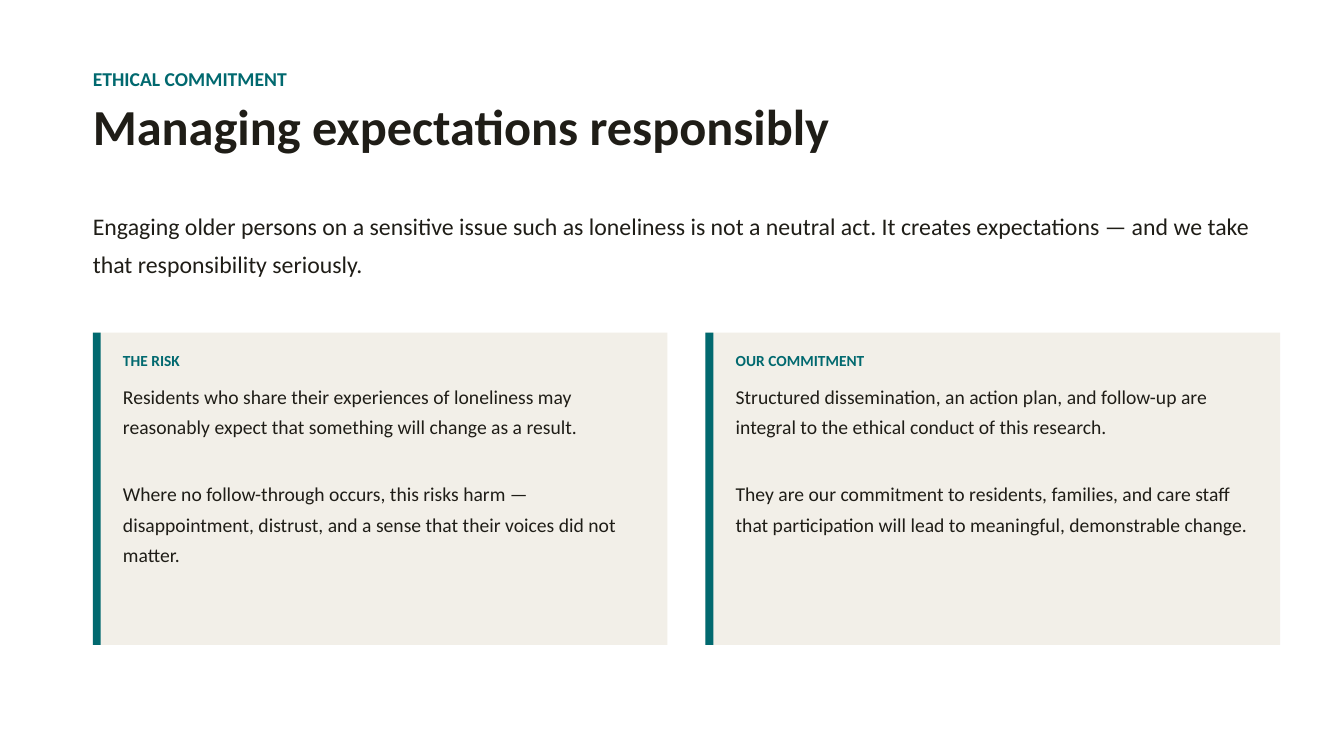
from pptx import Presentation
from pptx.dml.color import RGBColor
from pptx.enum.shapes import MSO_SHAPE as Shape
from pptx.enum.text import MSO_ANCHOR as Anchor
from pptx.util import Cm, Pt

TEAL = RGBColor(0x01, 0x69, 0x6F)
INK = RGBColor(0x1F, 0x1D, 0x17)
SAND = RGBColor(0xF2, 0xEF, 0xE8)

MARGIN = 2.34
CARD_TOP, CARD_WIDTH, CARD_HEIGHT = 8.38, 14.48, 7.87
CARD_PITCH = 15.44
BAR_WIDTH = 0.2

presentation = Presentation()
presentation.slide_width = Cm(33.87)
presentation.slide_height = Cm(19.05)
slide = presentation.slides.add_slide(presentation.slide_layouts[6])


def add_text(left, top, width, height, paragraphs, anchor=Anchor.TOP):
    """Each paragraph is (text, size, colour, bold, line spacing, space before)."""
    box = slide.shapes.add_textbox(Cm(left), Cm(top), Cm(width), Cm(height))
    frame = box.text_frame
    frame.word_wrap = True
    frame.vertical_anchor = anchor
    frame.margin_left = frame.margin_right = 0
    frame.margin_top = frame.margin_bottom = 0
    for index, (text, size, colour, bold, spacing, before) in enumerate(paragraphs):
        paragraph = frame.add_paragraph() if index else frame.paragraphs[0]
        paragraph.line_spacing = spacing
        paragraph.space_before = Pt(before)
        run = paragraph.add_run()
        run.text = text
        run.font.name = "Calibri"
        run.font.size = Pt(size)
        run.font.bold = bold
        run.font.color.rgb = colour


def add_block(left, width, colour):
    shape = slide.shapes.add_shape(
        Shape.RECTANGLE, Cm(left), Cm(CARD_TOP), Cm(width), Cm(CARD_HEIGHT))
    shape.shadow.inherit = False
    shape.fill.solid()
    shape.fill.fore_color.rgb = colour
    shape.line.fill.background()


# Heading
add_text(MARGIN, 1.02, 29.21, 3.68, [
    ("ETHICAL COMMITMENT", 14, TEAL, True, 0.9, 0),
    ("Managing expectations responsibly", 36, INK, True, 0.9, 8),
], Anchor.MIDDLE)

# Lead statement
add_text(MARGIN, 5.08, 29.21, 2.79, [
    ("Engaging older persons on a sensitive issue such as loneliness is not a "
     "neutral act. It creates expectations — and we take that responsibility "
     "seriously.", 17, INK, False, 1.35, 0),
])

# Two cards, each with an accent bar
cards = [
    ("THE RISK",
     "Residents who share their experiences of loneliness may reasonably expect "
     "that something will change as a result.",
     "Where no follow-through occurs, this risks harm — disappointment, distrust, "
     "and a sense that their voices did not matter."),
    ("OUR COMMITMENT",
     "Structured dissemination, an action plan, and follow-up are integral to the "
     "ethical conduct of this research.",
     "They are our commitment to residents, families, and care staff that "
     "participation will lead to meaningful, demonstrable change."),
]
for column, (label, opening, closing) in enumerate(cards):
    left = MARGIN + column * CARD_PITCH
    add_block(left, CARD_WIDTH, SAND)
    add_block(left, BAR_WIDTH, TEAL)
    add_text(left + 0.76, CARD_TOP + 0.46, 13.21, 7.11, [
        (label, 11, TEAL, True, 1.0, 0),
        (opening, 14, INK, False, 1.3, 6),
        (closing, 14, INK, False, 1.3, 26),
    ])

presentation.save("out.pptx")
